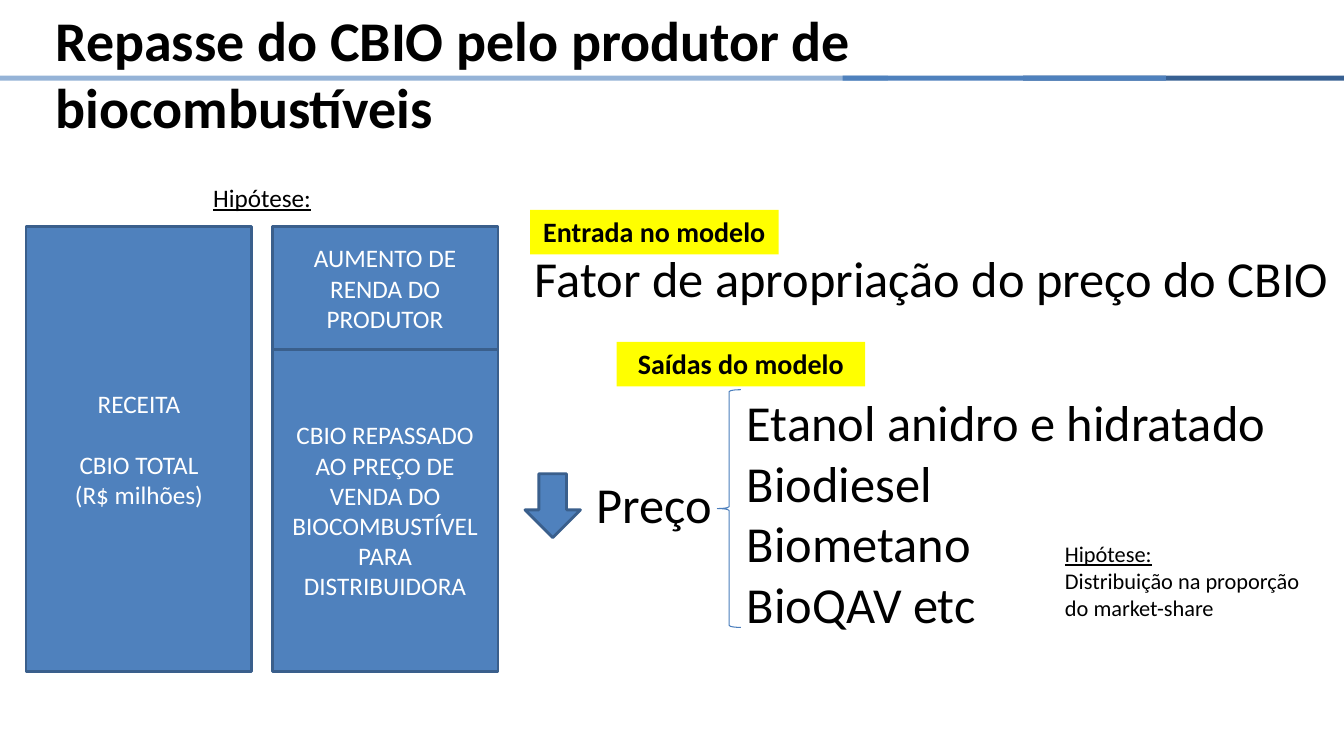
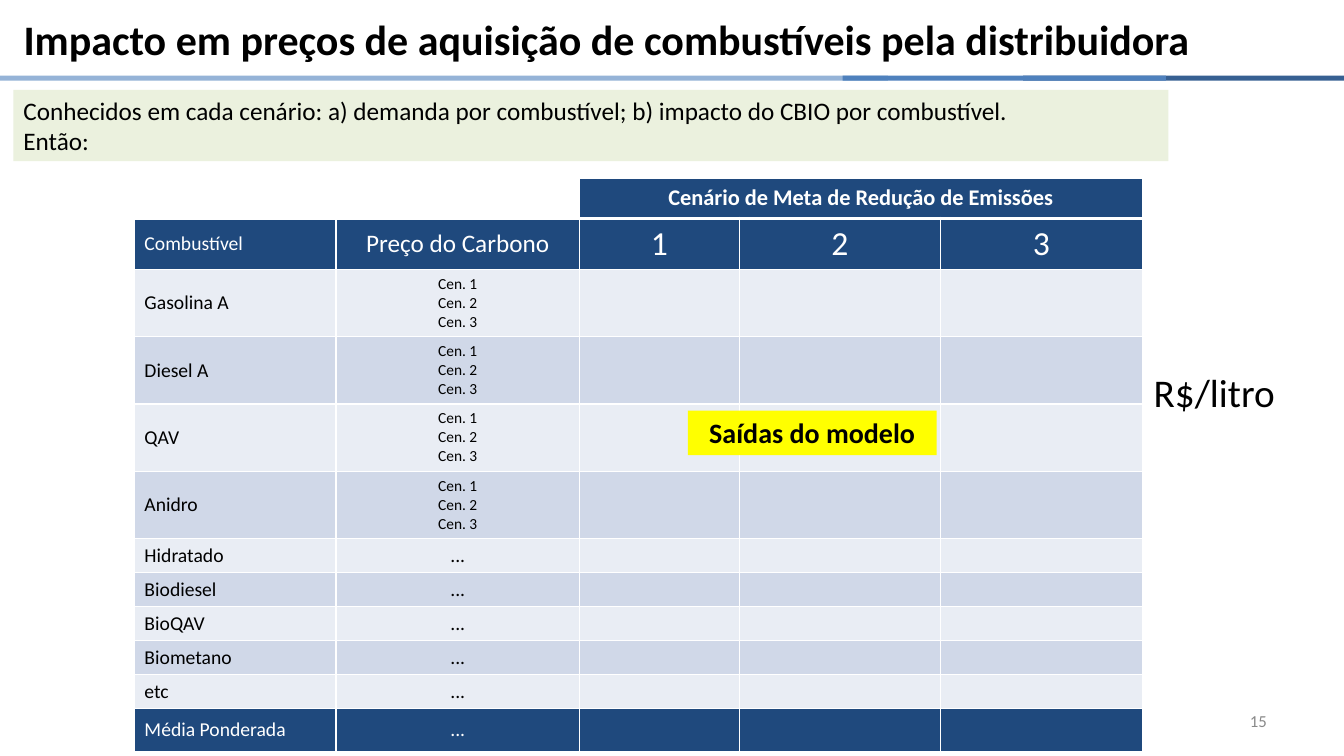
from dataclasses import dataclass

from lxml.etree import SubElement
from pptx import Presentation
from pptx.dml.color import RGBColor
from pptx.enum.shapes import MSO_SHAPE
from pptx.enum.text import MSO_ANCHOR, MSO_AUTO_SIZE, PP_ALIGN
from pptx.oxml.ns import qn
from pptx.util import Inches, Pt

COLUMNS, ROWS = 160, 90
SLIDE_WIDTH, SLIDE_HEIGHT = Inches(13.33), Inches(7.5)
FONT = "Calibri"

BLACK = RGBColor(0x00, 0x00, 0x00)
WHITE = RGBColor(0xFF, 0xFF, 0xFF)
GRAY = RGBColor(0x89, 0x89, 0x89)
BLUE = RGBColor(0x4F, 0x81, 0xBD)
BLUE_EDGE = RGBColor(0x3A, 0x5F, 0x8C)
BRACE_BLUE = RGBColor(0x4B, 0x7E, 0xBC)
LIGHT_BAND = RGBColor(0x95, 0xB3, 0xD7)
DARK_BAND = RGBColor(0x37, 0x60, 0x92)
NAVY = RGBColor(0x1F, 0x49, 0x7D)
PALE_ROW = RGBColor(0xE9, 0xED, 0xF4)
BLUE_ROW = RGBColor(0xD0, 0xD8, 0xE8)
YELLOW = RGBColor(0xFF, 0xFF, 0x00)
PALE_GREEN = RGBColor(0xEB, 0xF1, 0xDE)

BANDS = [(0, 105.7, LIGHT_BAND), (121.8, 38.2, DARK_BAND), (100.3, 38.5, BLUE)]
SCENARIOS = ["Cen. 1", "Cen. 2", "Cen. 3"]
FUELS = [(fuel, SCENARIOS, 8) for fuel in ("Gasolina A", "Diesel A", "QAV", "Anidro")]
FUELS += [(fuel, ["..."], 4.05) for fuel in ("Hidratado", "Biodiesel", "BioQAV", "Biometano", "etc")]


@dataclass
class Box:
    left: float
    top: float
    width: float
    height: float

    def inner(self, left, top, width, height):
        return Box(self.left + left, self.top + top, width, height)

    def emu(self):
        across, down = SLIDE_WIDTH / COLUMNS, SLIDE_HEIGHT / ROWS
        return (round(self.left * across), round(self.top * down),
                round(self.width * across), round(self.height * down))


def write(frame, lines, size=18, color=BLACK, bold=False, underline=False,
          align=PP_ALIGN.LEFT, anchor=MSO_ANCHOR.TOP, wrap=True, before=()):
    frame.word_wrap = wrap
    frame.vertical_anchor = anchor
    for index, line in enumerate(lines):
        paragraph = frame.paragraphs[0] if index == 0 else frame.add_paragraph()
        paragraph.alignment = align
        paragraph.space_before = Pt(dict(before).get(index, 0))
        run = paragraph.add_run()
        run.text = line
        run.font.name = FONT
        run.font.size = Pt(size)
        run.font.bold = bold
        run.font.underline = underline
        run.font.color.rgb = color


def add_text(slide, box, lines, **style):
    label = slide.shapes.add_textbox(*box.emu())
    write(label.text_frame, lines, **style)
    return label


def add_block(shapes, box, fill=None, line=None, weight=2, kind=MSO_SHAPE.RECTANGLE):
    block = shapes.add_shape(kind, *box.emu())
    block.shadow.inherit = False
    if fill is None:
        block.fill.background()
    else:
        block.fill.solid()
        block.fill.fore_color.rgb = fill
    if line is None:
        block.line.fill.background()
    else:
        block.line.color.rgb = line
        block.line.width = Pt(weight)
    return block


def place(placeholder, box):
    placeholder.left, placeholder.top, placeholder.width, placeholder.height = box.emu()
    placeholder.text_frame.auto_size = MSO_AUTO_SIZE.NONE


def start_slide(deck, layout, heading, box, size):
    slide = deck.slides.add_slide(deck.slide_layouts[layout])
    title = slide.shapes.title
    place(title, box)
    write(title.text_frame, [heading], size=size, bold=True, anchor=MSO_ANCHOR.MIDDLE)
    bands = slide.shapes.add_group_shape()
    for left, width, color in BANDS:
        add_block(bands.shapes, Box(left, 9, width, 0.6), color)
    title.element.addprevious(bands.element)
    return slide


def add_tag(slide, box, caption):
    tag = add_block(slide.shapes, box, YELLOW)
    write(tag.text_frame, [caption], size=20, bold=True, align=PP_ALIGN.CENTER)


def add_revenue_split(slide, box):
    gap, label_height, gain_height = 2.4, 5.9, 14.6
    width = (box.width - gap) / 2
    height = box.height - label_height
    right = width + gap
    blocks = [
        (0, label_height, height, ["RECEITA", "CBIO TOTAL", "(R$ milhões)"], {1: 22}),
        (right, label_height + gain_height, height - gain_height,
         ["CBIO REPASSADO AO PREÇO DE VENDA DO BIOCOMBUSTÍVEL PARA DISTRIBUIDORA"], {}),
        (right, label_height, gain_height, ["AUMENTO DE RENDA DO PRODUTOR"], {}),
    ]
    for left, top, block_height, lines, before in blocks:
        block = add_block(slide.shapes, box.inner(left, top, width, block_height), BLUE, BLUE_EDGE)
        write(block.text_frame, lines, color=WHITE, align=PP_ALIGN.CENTER,
              anchor=MSO_ANCHOR.MIDDLE, before=before)
    add_text(slide, box.inner(21.1, 0, 14.2, 4.8), ["Hipótese:"], underline=True, wrap=False)


def add_model_input(slide, box):
    add_text(slide, box.inner(0, 3.8, box.width, 8.5),
             ["Fator de apropriação do preço do CBIO"], size=36)
    add_tag(slide, box.inner(0.6, 0, 29.6, 5.3), "Entrada no modelo")


def add_model_outputs(slide, box):
    add_block(slide.shapes, box.inner(0, 15.7, 6.6, 7.6), BLUE, BLUE_EDGE, kind=MSO_SHAPE.DOWN_ARROW)
    add_text(slide, box.inner(7.3, 15, 16.3, 8.5), ["Preço"], size=36, wrap=False)
    add_block(slide.shapes, box.inner(22.9, 5.7, 2.8, 28.3), line=BRACE_BLUE, weight=0.75,
              kind=MSO_SHAPE.LEFT_BRACE)
    fuels = slide.placeholders[1]
    place(fuels, box.inner(25.2, 5.3, 68, 30.2))
    write(fuels.text_frame, ["Etanol anidro e hidratado", "Biodiesel", "Biometano", "BioQAV etc"], size=36)
    for paragraph in fuels.text_frame.paragraphs:
        properties = paragraph._p.get_or_add_pPr()
        properties.set("marL", "0")
        properties.set("indent", "0")
        SubElement(properties, qn("a:buNone"))
    note = add_text(slide, box.inner(63.1, 23, 30.4, 10.9),
                    ["Hipótese:", "Distribuição na proporção do market-share"], size=16)
    note.text_frame.paragraphs[0].runs[0].font.underline = True
    add_tag(slide, box.inner(10.9, 0, 29.6, 5.3), "Saídas do modelo")


def format_cell(cell, fill, lines=(), size=14, bottom=1, **style):
    properties = cell._tc.get_or_add_tcPr()
    for side, weight in (("L", 1), ("R", 1), ("T", 1), ("B", bottom)):
        border = SubElement(properties, qn(f"a:ln{side}"), w=str(Pt(weight)))
        solid = SubElement(border, qn("a:solidFill"))
        SubElement(solid, qn("a:srgbClr"), val=str(WHITE))
    if fill is None:
        cell.fill.background()
    else:
        cell.fill.solid()
        cell.fill.fore_color.rgb = fill
    if lines:
        write(cell.text_frame, lines, size=size, **style)
        cell.vertical_anchor = MSO_ANCHOR.MIDDLE
    else:
        SubElement(cell.text_frame.paragraphs[0]._p, qn("a:endParaRPr"), sz=str(size * 100))


def add_price_table(slide, box):
    widths = [24, 29, 19, 24, 24]
    heights = [4.8, 6.1] + [height for _, _, height in FUELS] + [5.2]
    table = slide.shapes.add_table(len(heights), len(widths), *box.emu()).table
    table.first_row = table.horz_banding = False
    for column, width in zip(table.columns, widths):
        column.width = round(width * SLIDE_WIDTH / COLUMNS)
    for row, height in zip(table.rows, heights):
        row.height = round(height * SLIDE_HEIGHT / ROWS)

    table.cell(0, 2).merge(table.cell(0, 4))
    for column in range(len(widths)):
        caption = ["Cenário de Meta de Redução de Emissões"] if column == 2 else []
        format_cell(table.cell(0, column), NAVY if column > 1 else None, caption, size=16,
                    bottom=3, color=WHITE, bold=True, align=PP_ALIGN.CENTER)

    body = [(["Combustível"], ["Preço do Carbono"], ["1"], ["2"], ["3"])]
    body += [([fuel], prices, [], [], []) for fuel, prices, _ in FUELS]
    body += [(["Média Ponderada"], ["..."], [], [], [])]
    for index, row in enumerate(body):
        edge = index in (0, len(body) - 1)
        fill = NAVY if edge else (PALE_ROW if index % 2 else BLUE_ROW)
        for column, lines in enumerate(row):
            size = 11 if lines is SCENARIOS else 14
            if index == 0:
                size = (14, 18, 24, 24, 24)[column]
            format_cell(table.cell(index + 1, column), fill, lines, size=size,
                        color=WHITE if edge else BLACK,
                        align=PP_ALIGN.CENTER if column else PP_ALIGN.LEFT)


def add_intro(slide, box):
    intro = add_block(slide.shapes, box, PALE_GREEN)
    write(intro.text_frame, [
        "Conhecidos em cada cenário: a) demanda por combustível; b) impacto do CBIO por combustível.",
        "Então:"])


def build_pass_through(deck):
    slide = start_slide(deck, 1, "Repasse do CBIO pelo produtor de biocombustíveis",
                        Box(5.4, 5.3, 124.8, 6.6), 40)
    add_revenue_split(slide, Box(3.1, 21.1, 56.2, 58.8))
    add_model_input(slide, Box(62.5, 25, 97.5, 12.3))
    add_model_outputs(slide, Box(62.5, 40.7, 97.5, 35.5))


def build_price_impact(deck):
    slide = start_slide(deck, 5, "Impacto em preços de aquisição de combustíveis pela distribuidora",
                        Box(1.6, 1.3, 151.2, 6.6), 30)
    add_price_table(slide, Box(16, 21.2, 120, 68.3))
    add_text(slide, Box(114.7, 83.4, 37.3, 4.8), ["15"], size=12, color=GRAY,
             align=PP_ALIGN.RIGHT, anchor=MSO_ANCHOR.MIDDLE)
    add_text(slide, Box(136, 43.3, 17.1, 6.9), ["R$/litro"], size=28,
             align=PP_ALIGN.CENTER, wrap=False)
    add_intro(slide, Box(1.6, 10.7, 137.5, 8.5))
    add_tag(slide, Box(81.9, 48.9, 29.6, 5.3), "Saídas do modelo")


def main():
    deck = Presentation()
    deck.slide_width, deck.slide_height = SLIDE_WIDTH, SLIDE_HEIGHT
    build_pass_through(deck)
    build_price_impact(deck)
    deck.save("out.pptx")


if __name__ == "__main__":
    main()
